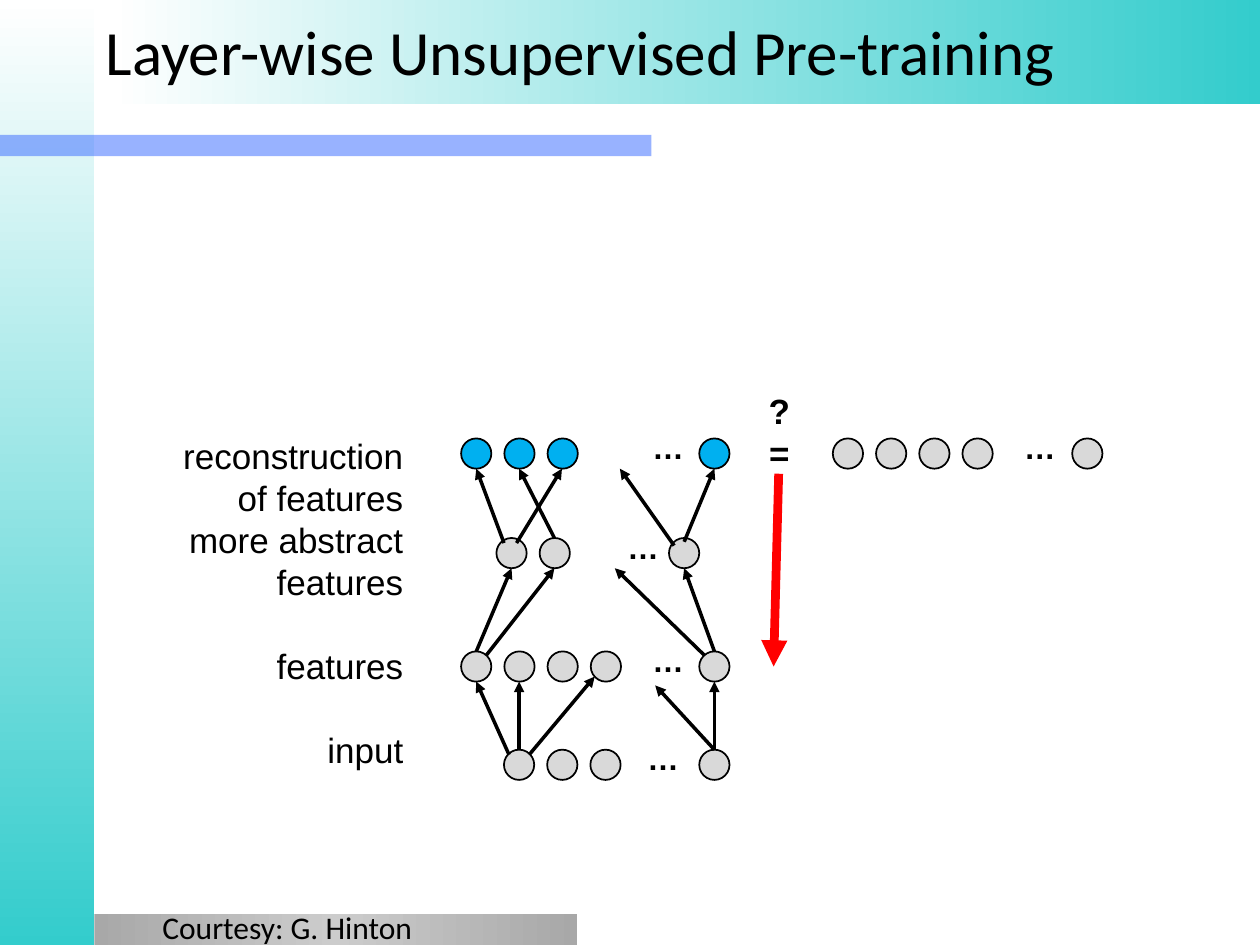
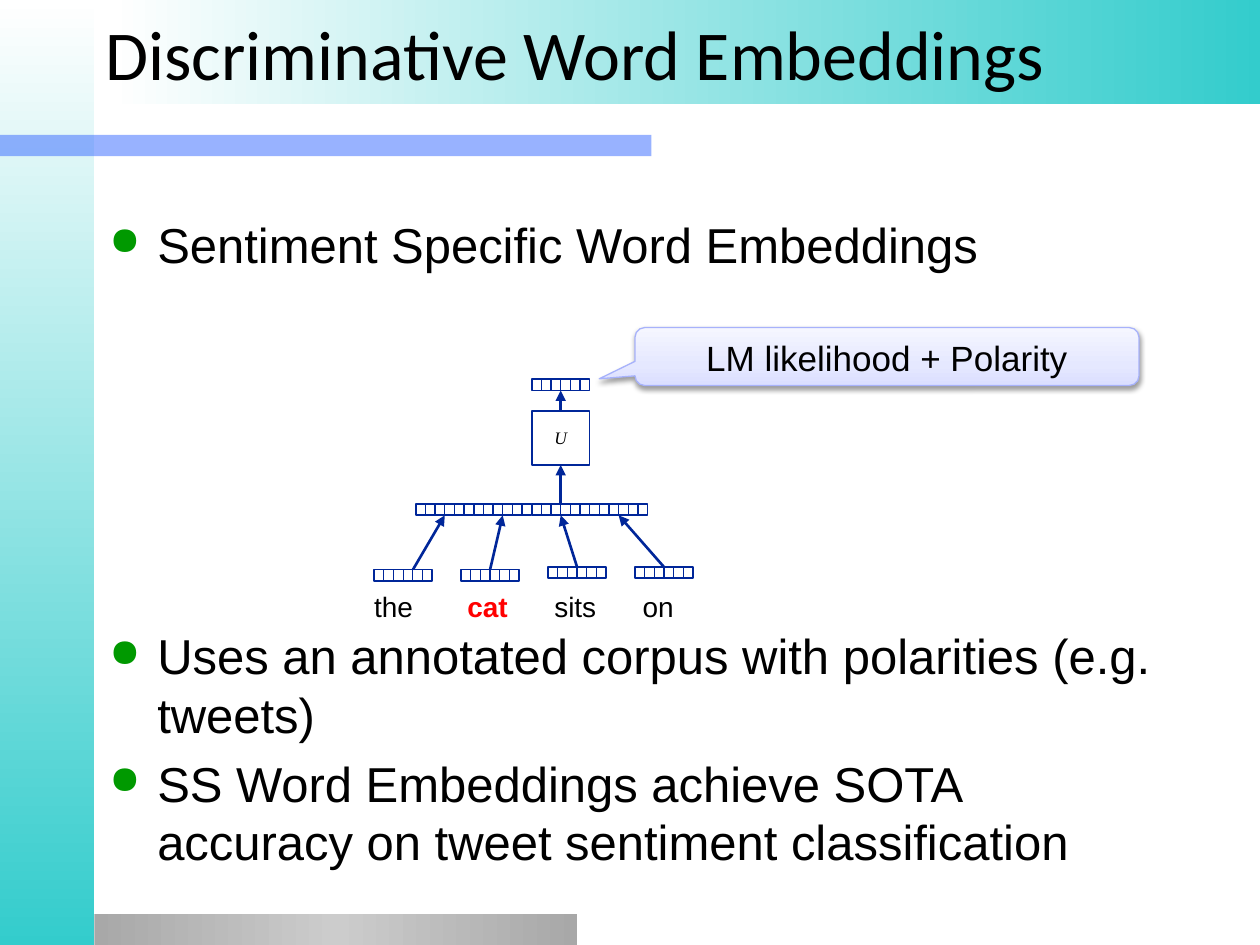
from pptx import Presentation
from pptx.dml.color import RGBColor
from pptx.enum.shapes import MSO_CONNECTOR, MSO_SHAPE
from pptx.enum.text import MSO_ANCHOR, PP_ALIGN
from pptx.oxml import parse_xml
from pptx.oxml.ns import qn
from pptx.util import Inches, Pt

RECT, OVAL = MSO_SHAPE.RECTANGLE, MSO_SHAPE.OVAL
CALL = MSO_SHAPE.ROUNDED_RECTANGULAR_CALLOUT
LINE = MSO_CONNECTOR.STRAIGHT
LEFT, MID, RIGHT = PP_ALIGN.LEFT, PP_ALIGN.CENTER, PP_ALIGN.RIGHT
TOP, CENTRE = MSO_ANCHOR.TOP, MSO_ANCHOR.MIDDLE
NS = 'xmlns:a="http://schemas.openxmlformats.org/drawingml/2006/main"'

BLACK, WHITE, RED, NAVY = "000000", "FFFFFF", "FF0000", "002699"
GREY, SKY, TEAL, GREEN = "D9D9D9", "00B0F0", "33CCCC", "009900"
LEAD = 1.2  # line pitch as a share of the text size

# ---- Shared bands: place, gradient stops (position, colour, shade), angle
FADE = [(0, WHITE, 100), (100, TEAL, 100)]
STEEL = [(0, "CCCCCC", 64), (50, "CCCCCC", 100), (100, "CCCCCC", 64)]
SIDE = ((0, 0, 0.75, 7.5), FADE, 90)
FOOT = ((0.75, 7.25, 3.83, 0.25), STEEL, 0)
HEAD = ((0.88, 0, 9.12, 0.83), FADE, 0)
RULE = (0, 1.07, 5.17, 0.17)

# ---- Slide 1: rows of nodes (left, top, count, last left, dots left, colour)
NODE, STEP = 0.24, 0.343
ROWS = {
    "input": (4, 5.95, 3, 5.55, 5.04, GREY),
    "feats": (3.66, 5.17, 4, 5.55, 5.08, GREY),
    "deep": (3.94, 4.27, 2, 5.31, 4.88, GREY),
    "recon": (3.66, 3.48, 3, 5.55, 5.08, SKY),
    "goal": (6.61, 3.48, 4, 8.51, 8.03, GREY),
}
# Arrows between rows: start x, drop below row top, end x, drop below row foot
LINKS = [
    ("input", "feats", [(4.04, 0.04, 3.78, 0), (4.12, 0, 4.12, 0),
                        (4.2, 0.04, 4.72, -0.04), (5.67, 0, 5.2, 0.03),
                        (5.67, 0, 5.67, 0)]),
    ("feats", "deep", [(3.78, 0, 4.06, 0), (3.86, 0.03, 4.4, 0),
                       (5.67, 0, 5.43, 0), (5.59, 0.03, 4.88, 0)]),
    ("deep", "recon", [(4, 0.04, 3.78, 0), (4.1, 0.04, 4.46, 0),
                       (4.4, 0, 4.12, 0), (5.43, 0.03, 5.67, 0),
                       (5.35, 0.06, 4.92, 0)]),
]
LABELS = ["reconstruction", "of features", "more abstract", "features",
          "features", "input"]

# ---- Slide 2: bullets and network of cell strips
BULLETS = [
    "Sentiment Specific Word Embeddings",
    "Uses an annotated corpus with polarities (e.g. tweets)",
    "SS Word Embeddings achieve SOTA accuracy on tweet sentiment classification",
]
CELLS, WIDE, HIGH = 6, 0.46, 0.09
WORDS = [("the", 4.52, 0), ("cat", 4.52, 0.74),
         ("sits", 4.5, 1.43), ("on", 4.5, 2.13)]  # word, strip top, tab
WORD_X, WORD_GAP, JOIN_X, JOIN_Y = 2.97, 0.69, 3.3, 4
OUT_X, OUT_Y, BOX_Y, BOX_H = 4.22, 3.01, 3.26, 0.43


# ---- Helpers
def tint(code):
    return RGBColor.from_string(code)


def inch(*nums):
    return [Inches(n) for n in nums]


def draw(shapes, kind, place, fill=None, edge=None, width=1):
    item = shapes.add_shape(kind, *inch(*place))
    item.shadow.inherit = False
    if fill:
        item.fill.solid()
        item.fill.fore_color.rgb = tint(fill)
    else:
        item.fill.background()
    if edge:
        item.line.color.rgb = tint(edge)
        item.line.width = Pt(width)
    else:
        item.line.fill.background()
    return item


def blend(item, stops, angle):
    item.fill.gradient()
    old = item._element.spPr.find(qn("a:gradFill"))
    marks = "".join(
        f'<a:gs pos="{pos * 1000}"><a:srgbClr val="{code}">'
        + (f'<a:shade val="{shade * 1000}"/>' if shade < 100 else "")
        + "</a:srgbClr></a:gs>" for pos, code, shade in stops)
    new = parse_xml(f'<a:gradFill {NS} rotWithShape="1"><a:gsLst>{marks}'
                    f'</a:gsLst><a:lin ang="{angle * 60000}" scaled="0"/>'
                    '</a:gradFill>')
    old.getparent().replace(old, new)


def link(shapes, start, end, color=BLACK, width=2, arrow=True):
    item = shapes.add_connector(LINE, *inch(*start, *end))
    item.line.color.rgb = tint(color)
    item.line.width = Pt(width)
    if arrow:
        item.line._get_or_add_ln().append(
            parse_xml(f'<a:tailEnd {NS} type="triangle"/>'))
    item._element.spPr.append(parse_xml(f'<a:effectLst {NS}/>'))


def write(item, paras, size=18, font="Arial", bold=False, italic=False,
          align=LEFT, anchor=TOP, lead=None, before=(), hot=None, pad=True):
    """Each paragraph is a list of runs; the run equal to hot is red and bold."""
    frame = item.text_frame
    frame.word_wrap = True
    frame.vertical_anchor = anchor
    if not pad:
        frame.margin_left = frame.margin_right = 0
        frame.margin_top = frame.margin_bottom = 0
    for i, runs in enumerate(paras):
        para = frame.add_paragraph() if i else frame.paragraphs[0]
        para.alignment = align
        if lead:
            para.line_spacing = Pt(size * lead)
        if before:
            para.space_before = Pt(before[i])
        for words in runs:
            run = para.add_run()
            run.text = words
            face = run.font
            face.name, face.size = font, Pt(size)
            face.bold, face.italic = bold or words == hot, italic
            face.color.rgb = tint(RED if words == hot else BLACK)
    return frame


def note(shapes, place, paras, **style):
    return write(shapes.add_textbox(*inch(*place)), paras, **style)


def start(deck, title, size, high):
    """Blank slide with the shared bands and the title."""
    shapes = deck.slides.add_slide(deck.slide_layouts[6]).shapes
    blend(draw(shapes, RECT, SIDE[0]), *SIDE[1:])
    bar = draw(shapes, RECT, RULE, "3366FF")
    bar._element.spPr.find(".//" + qn("a:srgbClr")).append(
        parse_xml(f'<a:alpha {NS} val="50000"/>'))
    for place, stops, angle in (FOOT, HEAD):
        blend(draw(shapes, RECT, place), stops, angle)
    note(shapes, (0.74, 0, 9.26, high), [[title]], size=size, font="Calibri",
         anchor=CENTRE)
    return shapes


def strip(shapes, x, y, fill=WHITE):
    """Row of cells, kept together as a group."""
    part = shapes.add_group_shape().shapes
    draw(part, RECT, (x, y, WIDE, HIGH), fill, NAVY)
    for i in range(1, CELLS):
        at = x + i * WIDE / CELLS
        link(part, (at, y), (at, y + HIGH), NAVY, 0.75, arrow=False)


# ---- Slide 1
def layers(deck):
    shapes = start(deck, "Layer-wise Unsupervised Pre-training", 36, 0.8)
    for left, top, count, last, dots, color in ROWS.values():
        for x in [left + i * STEP for i in range(count)] + [last]:
            draw(shapes, OVAL, (x, top, NODE, NODE), color, BLACK)
        note(shapes, (dots, top - 0.13, 0.51, 0.4), [["…"]], bold=True)
    note(shapes, (0.94, 3.4, 2.36, 2.79), [[t] for t in LABELS], size=20,
         align=RIGHT, lead=LEAD, before=(0, 0, 0, 0, 24, 24))
    for low, high, lines in LINKS:
        base, goal = ROWS[low][1], ROWS[high][1] + NODE
        for x1, drop, x2, fall in lines:
            link(shapes, (x1, base + drop), (x2, goal + fall))
    link(shapes, (6.18, 3.76), (6.14, 5.29), RED, 5)
    note(shapes, (5.91, 3.04, 0.55, 0.77), [["?"], ["="]], size=20, bold=True,
         align=MID, lead=LEAD)
    note(shapes, (1.19, 7.16, 2.51, 0.4), [["Courtesy: G. Hinton"]],
         font="Calibri")


# ---- Slide 2
def words(deck):
    shapes = start(deck, "Discriminative Word Embeddings", 40, 0.84)

    # Bullets, with room for the network under the first
    size = 28
    gap = 0.2 * size
    room = 5 * (LEAD * size + gap)
    body = note(shapes, (0.77, 1.65, 8.5, 5.28), [[t] for t in BULLETS],
                size=size, lead=LEAD, before=(gap, gap + room, gap))
    for para in body.paragraphs:
        props = para._p.get_or_add_pPr()
        props.set("marL", str(Inches(0.38)))
        props.set("indent", str(-Inches(0.38)))
        for xml in (f'<a:buClr {NS}><a:srgbClr val="{GREEN}"/></a:buClr>',
                    f'<a:buSzPct {NS} val="80000"/>',
                    f'<a:buChar {NS} char="●"/>'):
            props.append(parse_xml(xml))

    # Strips and the arrows that join them
    mid = OUT_X + WIDE / 2
    for i, (_, top, _) in enumerate(WORDS):
        x, join = WORD_X + i * WORD_GAP, JOIN_X + i * WIDE
        strip(shapes, x, top)
        strip(shapes, join, JOIN_Y)
        foot = x + WIDE * (0.67 if i == 0 else 0.5)
        link(shapes, (foot, top), (join + WIDE / 2, JOIN_Y + HIGH), NAVY, 1.5)
    strip(shapes, OUT_X, OUT_Y, None)
    unit = draw(shapes, RECT, (OUT_X, BOX_Y, WIDE, BOX_H), WHITE, NAVY)
    write(unit, [["U"]], size=10, font="Times New Roman", italic=True,
          align=MID, anchor=CENTRE)
    link(shapes, (mid, JOIN_Y), (mid, BOX_Y + BOX_H), NAVY, 1.5)
    link(shapes, (mid, BOX_Y), (mid, OUT_Y + HIGH), NAVY, 1.5)

    # Words on tab stops
    runs = []
    for word, _, tab in WORDS:
        runs += ["\t", word] if tab else [word]
    line = note(shapes, (WORD_X, 4.68, 2.6, 0.27), [runs], size=16, hot="cat",
                pad=False)
    tabs = "".join(f'<a:tab pos="{Inches(tab)}" algn="l"/>'
                   for _, _, tab in WORDS if tab)
    line.paragraphs[0]._p.get_or_add_pPr().append(
        parse_xml(f'<a:tabLst {NS}>{tabs}</a:tabLst>'))

    # Callout
    call = draw(shapes, CALL, (5.04, 2.6, 4, 0.46), WHITE, "A7B2FB", 0.75)
    for i, value in enumerate((-0.571, 0.385, 0.167)):
        call.adjustments[i] = value
    blend(call, [(0, "DBDFFF", 100), (35, "E5E8FF", 100),
                 (100, "F5F6FF", 100)], 270)
    call._element.spPr.find(qn("a:effectLst")).append(parse_xml(
        f'<a:outerShdw {NS} blurRad="{Pt(3.1)}" dist="{Pt(1.6)}" '
        f'dir="5400000" rotWithShape="0"><a:srgbClr val="{BLACK}">'
        '<a:alpha val="38000"/></a:srgbClr></a:outerShdw>'))
    write(call, [["LM likelihood + Polarity"]], size=20, align=MID)


def main():
    deck = Presentation()
    deck.slide_width, deck.slide_height = inch(10, 7.5)
    layers(deck)
    words(deck)
    deck.save("out.pptx")


if __name__ == "__main__":
    main()
